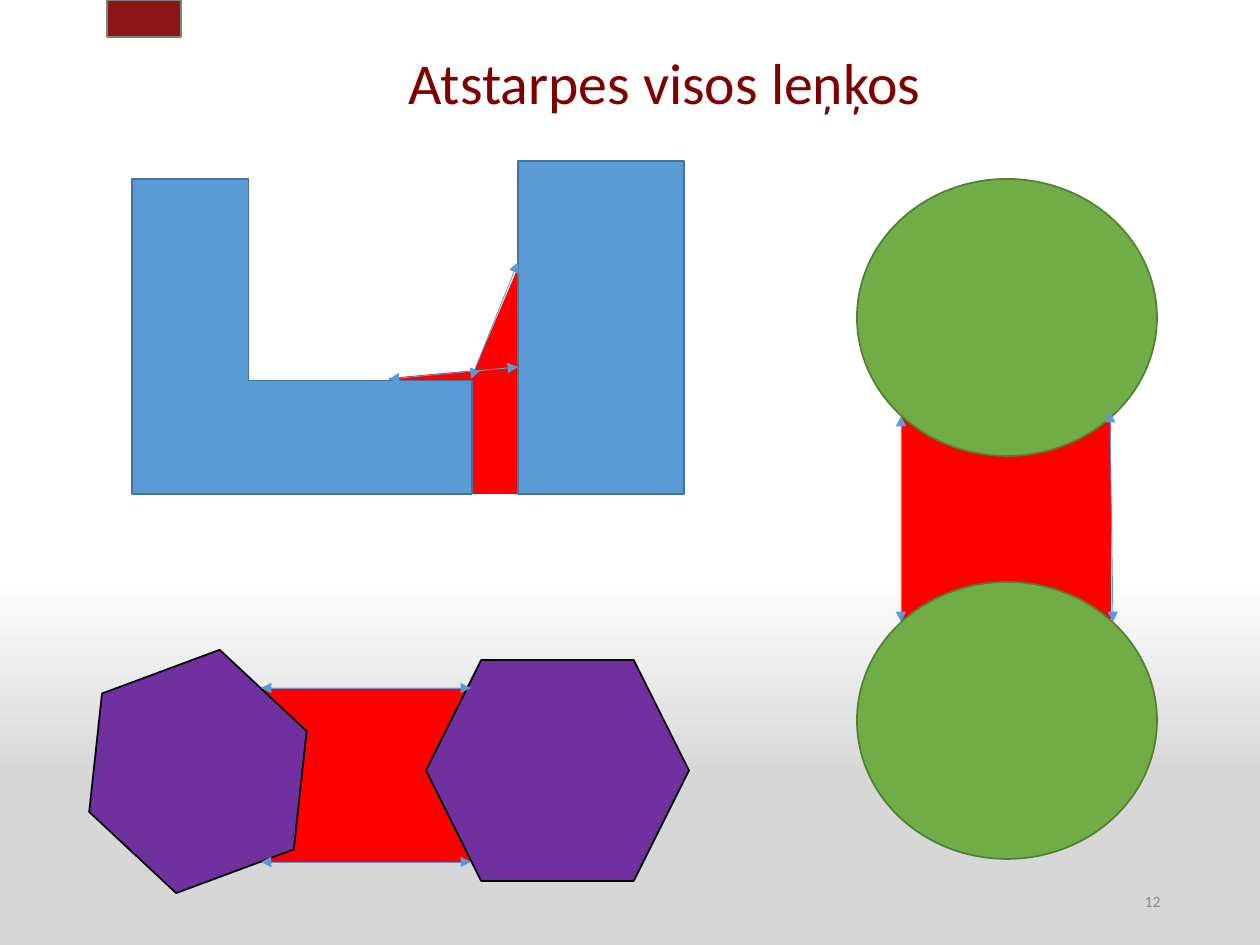
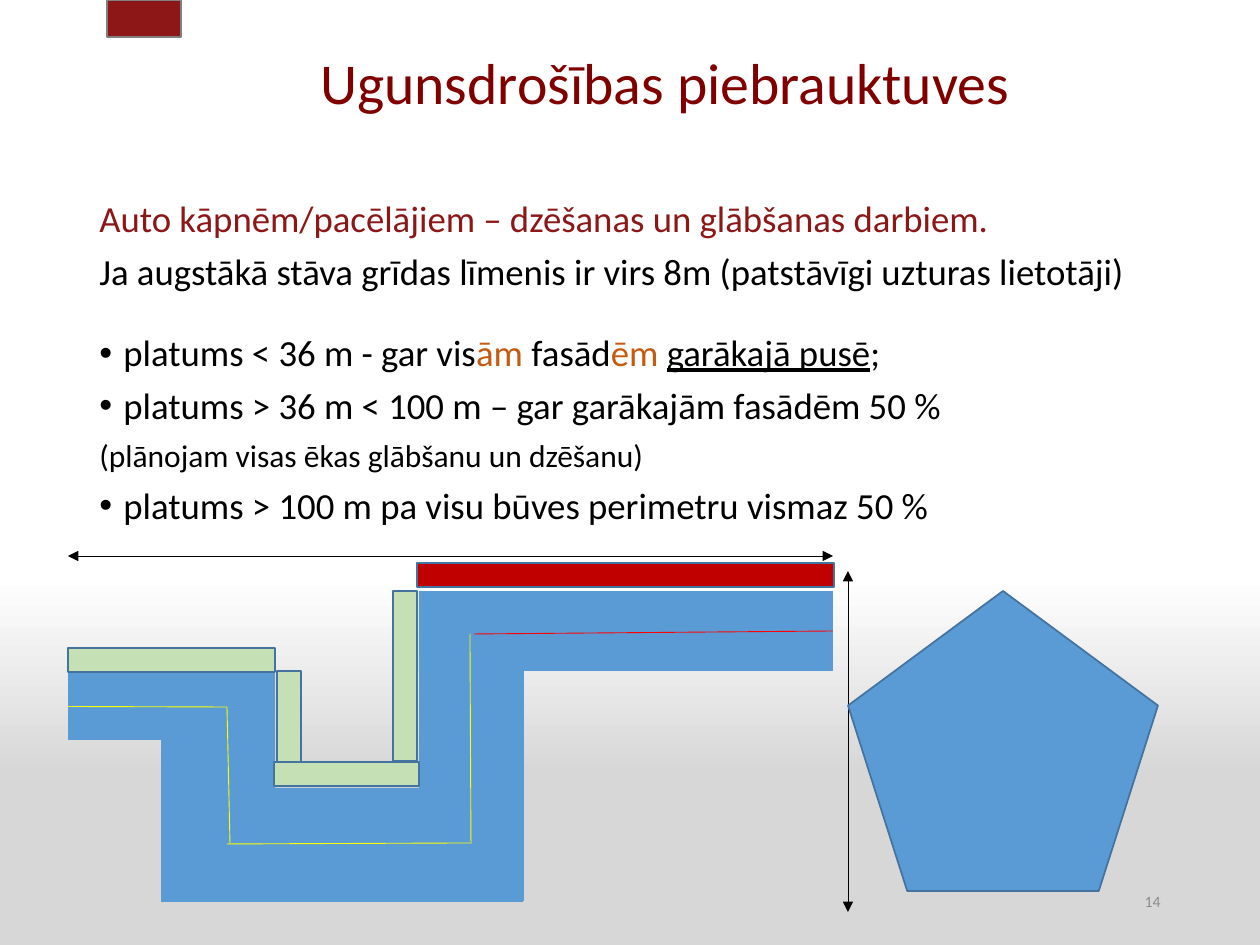
import pptx
import pptx.dml.color
import pptx.enum.shapes
import pptx.enum.text
import pptx.oxml.ns
import pptx.util
from lxml import etree

KIND = pptx.enum.shapes.MSO_SHAPE
ALIGN = pptx.enum.text.PP_ALIGN
MIDDLE = pptx.enum.text.MSO_ANCHOR.MIDDLE
qn = pptx.oxml.ns.qn
Pt = pptx.util.Pt

SCALE = 914400 / 126
WIDE, HIGH = 1260, 945
FONT = "Calibri"
BLACK, RED, YELLOW = "000000", "FF0000", "FFFF00"
BLUE, NAVY = "5B9BD5", "43739E"
GREEN, MOSS, PALE = "70AD47", "538035", "C5E0B4"
PURPLE, CRIMSON = "7030A0", "C00000"
TITLE, BRAND, RUST, GREY = "800000", "8D1717", "C55A11", "8C8C8C"
SKY = [(0, "FFFFFF"), (61, "FFFFFF"), (82, "D7D7D7"), (100, "D9D9D9")]

# Shapes: kind, box (left, top, width, height), fill, line, turn, adjustments
GAPS = [
    (KIND.RECTANGLE, (459, 292, 174, 116), RED, None, 293),
    (KIND.RECTANGLE, (394, 370, 173, 115), RED, None, 354.8),
    (KIND.RECTANGLE, (901, 411, 210, 220), RED),
    (KIND.RECTANGLE, (261, 688, 209, 175), RED),
    (KIND.RECTANGLE, (457, 379, 173, 115), RED),
]
HOUSES = [
    (KIND.HEXAGON, (82, 665, 232, 213), PURPLE, BLACK, 339.6),
    (KIND.HEXAGON, (426, 660, 263, 221), PURPLE, BLACK),
    (KIND.CORNER, (132, 179, 340, 315), BLUE, NAVY, 0, (0.36, 0.37)),
    (KIND.RECTANGLE, (518, 161, 166, 333), BLUE, NAVY),
    (KIND.OVAL, (857, 179, 300, 277), GREEN, MOSS),
    (KIND.OVAL, (857, 582, 300, 277), GREEN, MOSS),
]
SPANS = [
    (471, 379, 518, 262), (389, 379, 518, 367),
    (261, 688, 471, 688), (261, 862, 471, 862),
    (1110, 412, 1113, 622), (901, 416, 901, 622),
]

# Paragraphs: bullet, size, space before, runs (text, colour, underline)
RULES = [
    (False, 21, 0, [("Auto kāpnēm/pacēlājiem – dzēšanas un glābšanas darbiem.", BRAND)]),
    (False, 21, 7.5, [("Ja augstākā stāva grīdas līmenis ir virs 8m "
                       "(patstāvīgi uzturas lietotāji)", BLACK)]),
    (True, 21, 23.5, [("platums < 36 m - gar vis", BLACK), ("ām", RUST),
                      (" fasād", BLACK), ("ēm ", RUST),
                      ("garākajā pusē", BLACK, True), (";", BLACK)]),
    (True, 21, 7.5, [("platums > 36 m < 100 m – gar garākajām fasādēm 50 %", BLACK)]),
    (False, 18, 7.5, [("(plānojam visas ēkas glābšanu un dzēšanu)", BLACK)]),
    (True, 21, 7.5, [("platums > 100 m pa visu būves perimetru vismaz 50 %", BLACK)]),
]
SIZES = [(68, 556, 833, 556), (848, 571, 848, 912)]
WINGS = [
    (KIND.CORNER, (161, 674, 362, 228), BLUE),
    (KIND.RECTANGLE, (419, 591, 105, 310), BLUE),
    (KIND.RECTANGLE, (419, 591, 414, 80), BLUE),
    (KIND.RECTANGLE, (68, 673, 207, 67), BLUE),
]
ROADS = [
    (KIND.REGULAR_PENTAGON, (848, 591, 310, 300), BLUE, NAVY),
    (KIND.RECTANGLE, (68, 648, 207, 24), PALE, NAVY),
    (KIND.RECTANGLE, (274, 762, 145, 24), PALE, NAVY),
    (KIND.RECTANGLE, (277, 671, 24, 91), PALE, NAVY),
    (KIND.RECTANGLE, (393, 591, 24, 170), PALE, NAVY),
    (KIND.RECTANGLE, (417, 563, 417, 24), CRIMSON, NAVY),
]
AXES = [
    (68, 707, 227, 707, YELLOW), (227, 707, 230, 843, YELLOW),
    (227, 844, 470, 843, YELLOW), (471, 844, 470, 634, YELLOW),
    (474, 634, 833, 631, RED),
]


def px(*nums):
    return [round(n * SCALE) for n in nums]


def tint(code):
    return pptx.dml.color.RGBColor.from_string(code)


def draw(host, kind, box, fill, line=None, turn=0, adjust=()):
    shape = host.shapes.add_shape(kind, *px(*box))
    shape.shadow.inherit = False
    shape.rotation = turn
    for i, part in enumerate(adjust):
        shape.adjustments[i] = part
    shape.fill.solid()
    shape.fill.fore_color.rgb = tint(fill)
    if line:
        shape.line.color.rgb = tint(line)
        shape.line.width = Pt(1)
    else:
        shape.line.fill.background()
    return shape


def link(slide, ends, color, arrows=False):
    straight = pptx.enum.shapes.MSO_CONNECTOR.STRAIGHT
    line = slide.shapes.add_connector(straight, *px(*ends))
    line.line.color.rgb = tint(color)
    line.line.width = Pt(0.5)
    if arrows:
        for tag in ("a:headEnd", "a:tailEnd"):
            etree.SubElement(line.line._get_or_add_ln(), qn(tag), type="triangle")
    etree.SubElement(line._element.spPr, qn("a:effectLst"))
    return line


def write(slide, box, paras, align=ALIGN.LEFT, anchor=None, lead=0.9):
    frame = slide.shapes.add_textbox(*px(*box)).text_frame
    frame.word_wrap = True
    frame.vertical_anchor = anchor
    for i, (dot, size, before, runs) in enumerate(paras):
        para = frame.add_paragraph() if i else frame.paragraphs[0]
        para.alignment = align
        para.line_spacing = lead
        para.space_before = Pt(before)
        if dot:
            props = para._p.get_or_add_pPr()
            dent = px(24)[0]
            props.set("marL", str(dent))
            props.set("indent", str(-dent))
            etree.SubElement(props, qn("a:buFont"), typeface="Arial")
            etree.SubElement(props, qn("a:buChar"), char="•")
        for text, color, *under in runs:
            run = para.add_run()
            run.text = text
            run.font.name = FONT
            run.font.size = Pt(size)
            run.font.color.rgb = tint(color)
            if under:
                run.font.underline = True


def paint(slide):
    """Fill the background with the shared gradient."""
    fill = slide.background.fill
    fill.gradient()
    fill.gradient_angle = 270
    stops = slide.element.find(".//" + qn("a:gsLst"))
    for stop in list(stops):
        stops.remove(stop)
    for place, code in SKY:
        stop = etree.SubElement(stops, qn("a:gs"), pos=str(place * 1000))
        etree.SubElement(stop, qn("a:srgbClr"), val=code)


def start(deck, title, number, under=()):
    """Add a slide with its shared parts; under holds shapes beneath them."""
    slide = deck.slides.add_slide(deck.slide_layouts[6])
    paint(slide)
    for item in under:
        draw(slide, *item)
    write(slide, (173, 44, 984, 84), [(False, 33, 0, [(title, TITLE)])],
          ALIGN.CENTER, MIDDLE)
    write(slide, (890, 876, 283, 50), [(False, 9, 0, [(number, GREY)])],
          ALIGN.RIGHT, MIDDLE, 1.0)
    draw(slide, KIND.RECTANGLE, (107, 0, 74, 37), BRAND, "808080")
    return slide


def angles(deck):
    slide = start(deck, "Atstarpes visos leņķos", "12", GAPS)
    for item in HOUSES:
        draw(slide, *item)
    for ends in SPANS:
        link(slide, ends, BLUE, True)


def access(deck):
    slide = start(deck, "Ugunsdrošības piebrauktuves", "14")
    write(slide, (87, 195, 1086, 716), RULES)
    for ends in SIZES:
        link(slide, ends, BLACK, True)
    group = slide.shapes.add_group_shape()
    wings = [draw(group, *item) for item in WINGS]
    for item in ROADS:
        draw(slide, *item)
    lines = [link(slide, ends, color) for *ends, color in AXES]
    lines[0].begin_connect(wings[3], 1)
    lines[-1].end_connect(wings[2], 3)


def main():
    deck = pptx.Presentation()
    deck.slide_width, deck.slide_height = px(WIDE, HIGH)
    angles(deck)
    access(deck)
    deck.save("out.pptx")


if __name__ == "__main__":
    main()
